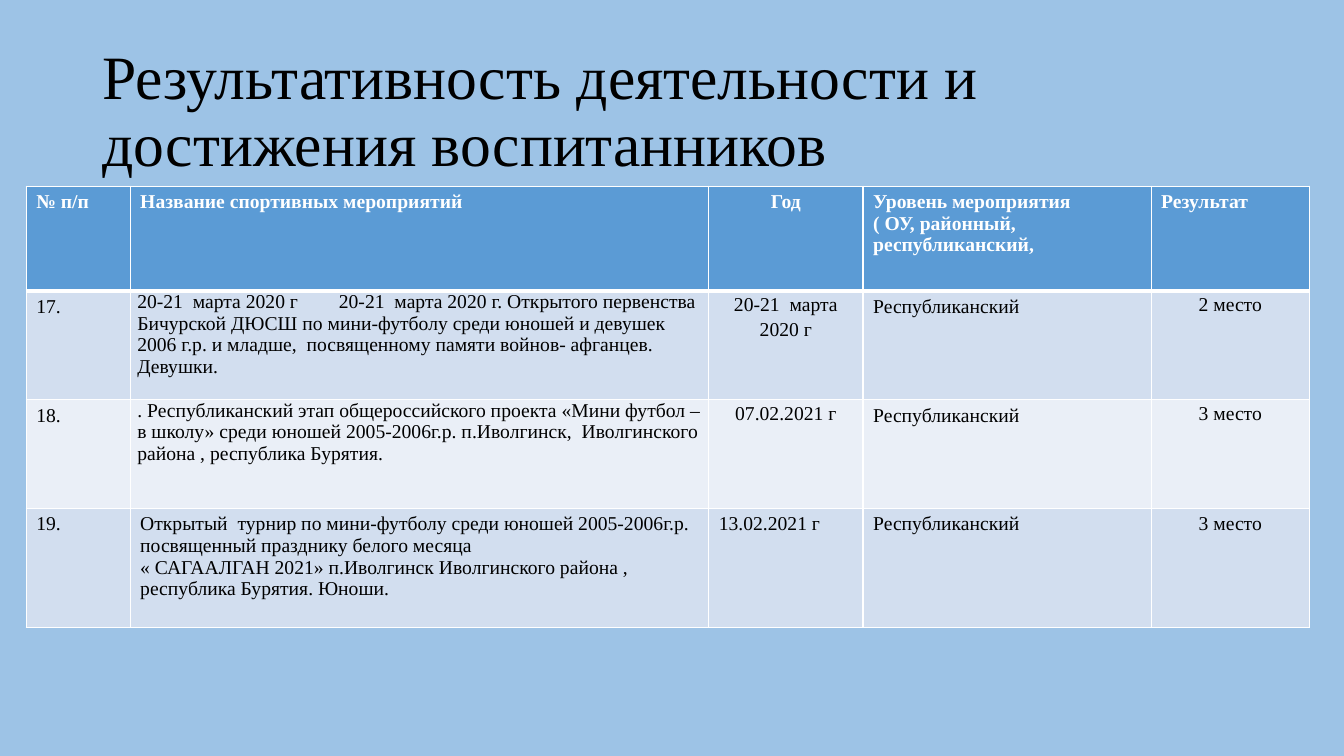
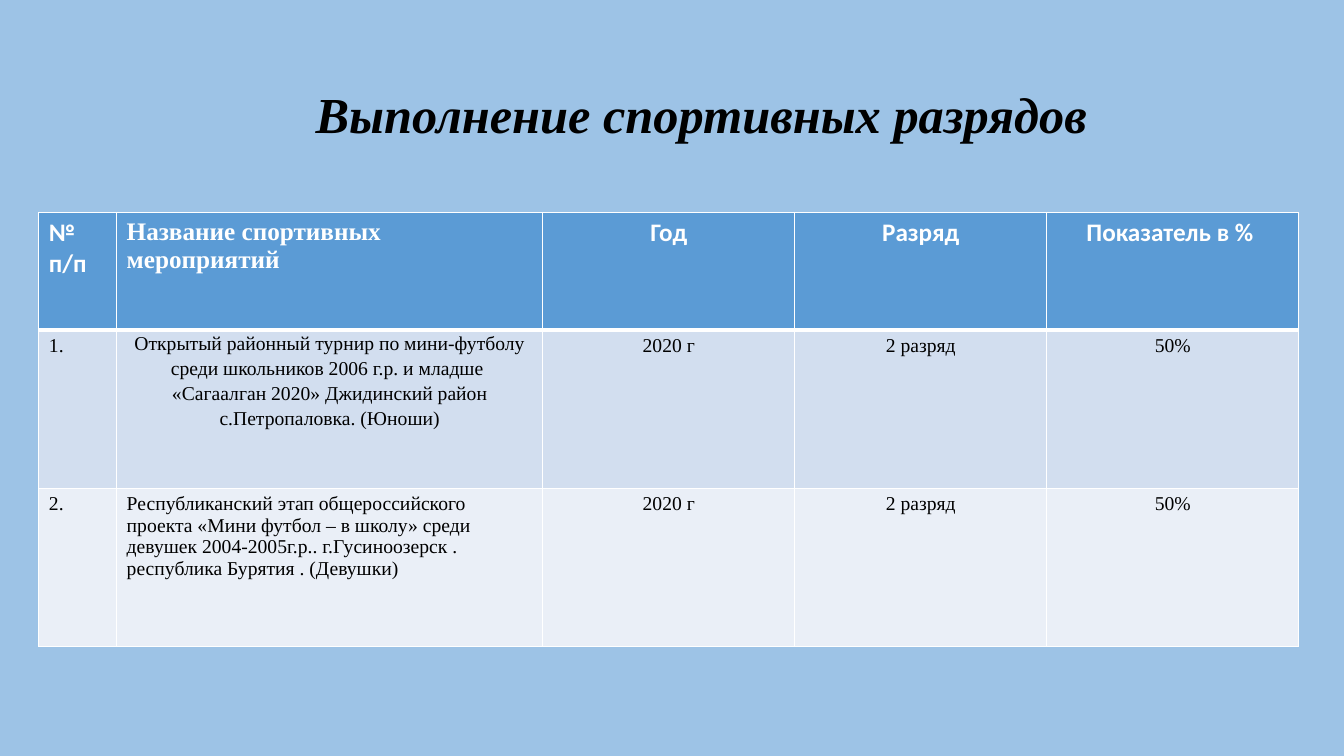
import pptx
import pptx.dml.color
import pptx.enum.text
import pptx.oxml
import pptx.oxml.ns
import pptx.util

Cm = pptx.util.Cm
CENTER = pptx.enum.text.PP_ALIGN.CENTER
SERIF = "Times New Roman"
BACKGROUND, HEADER, WHITE, BLACK = "9DC3E6", "5B9BD5", "FFFFFF", "000000"
BANDS = ["D2DEEF", "EAEFF7"]

HEAD = {"size": 14, "bold": True, "color": WHITE}
BIG_HEAD = HEAD | {"size": 18, "font": "Calibri", "align": CENTER}
CENTERED = {"align": CENTER}
TIGHT = {"tight": True}
TIGHT_CENTERED = {"tight": True, "align": CENTER, "spacing": 1.15}

pages = [
    {
        "title": "Результативность деятельности и достижения воспитанников",
        "title_at": (2.33, 1.01),
        "title_format": {"size": 44},
        "table_at": (0.66, 4.69),
        "columns": [2.62, 14.58, 3.89, 7.26, 3.99],
        "heights": [2.64, 2.74, 2.74, 3],
        "rows": [
            [
                ("№ п/п", HEAD),
                ("Название спортивных мероприятий", HEAD),
                ("Год", HEAD | CENTERED),
                ("Уровень мероприятия\n( ОУ, районный, республиканский,", HEAD),
                ("Результат", HEAD),
            ],
            [
                ("17.", {}),
                ("20-21  марта 2020 г\t20-21  марта 2020 г. Открытого первенства "
                 "Бичурской ДЮСШ по мини-футболу среди юношей и девушек 2006 г.р. "
                 "и младше,  посвященному памяти войнов- афганцев. Девушки.", TIGHT),
                ("20-21  марта 2020 г", TIGHT_CENTERED),
                ("Республиканский", {}),
                ("2 место", TIGHT_CENTERED),
            ],
            [
                ("18.", {}),
                (". Республиканский этап общероссийского проекта «Мини футбол – "
                 "в школу» среди юношей 2005-2006г.р. п.Иволгинск,  Иволгинского "
                 "района , республика Бурятия.", TIGHT),
                ("07.02.2021 г", TIGHT_CENTERED),
                ("Республиканский", {}),
                ("3 место", TIGHT_CENTERED),
            ],
            [
                ("19.", {}),
                ("Открытый  турнир по мини-футболу среди юношей 2005-2006г.р. "
                 "посвященный празднику белого месяца\n« САГААЛГАН 2021» п.Иволгинск "
                 "Иволгинского района , республика Бурятия. Юноши.", {}),
                ("13.02.2021 г", {}),
                ("Республиканский", {}),
                ("3 место", CENTERED),
            ],
        ],
    },
    {
        "title": "Выполнение спортивных разрядов ",
        "title_at": (3.23, 1.12),
        "title_format": {"size": 36, "bold": True, "italic": True, "align": CENTER},
        "table_at": (0.98, 5.36),
        "columns": [1.96, 10.74, 6.35, 6.35, 6.35],
        "heights": [2.95, 3.99, 3.99],
        "rows": [
            [
                ("№ п/п", BIG_HEAD | {"align": None}),
                ("Название спортивных мероприятий", HEAD | {"size": 18}),
                ("Год", BIG_HEAD),
                ("Разряд", BIG_HEAD),
                ("Показатель в % ", BIG_HEAD),
            ],
            [
                ("1.", {}),
                ("Открытый районный турнир по мини-футболу среди школьников 2006 г.р. "
                 "и младше  «Сагаалган 2020» Джидинский район с.Петропаловка. (Юноши)",
                 TIGHT_CENTERED),
                ("2020 г", CENTERED),
                ("2 разряд", CENTERED),
                ("50%", CENTERED),
            ],
            [
                ("2.", {}),
                ("Республиканский этап общероссийского проекта «Мини футбол – в школу» "
                 "среди девушек 2004-2005г.р.. г.Гусиноозерск . республика Бурятия . "
                 "(Девушки)", {}),
                ("2020 г", CENTERED),
                ("2 разряд", CENTERED),
                ("50%", CENTERED),
            ],
        ],
    },
]


def paint(target, color):
    if hasattr(target, "solid"):
        target.solid()
        target = target.fore_color
    target.rgb = pptx.dml.color.RGBColor.from_string(color)


def write(holder, text, size=14, font=SERIF, color=BLACK, bold=False, italic=False,
          align=None, spacing=1.0, tight=False):
    if tight:
        holder.margin_left = holder.margin_right = Cm(0.18)
        holder.margin_top = holder.margin_bottom = 0
    frame = getattr(holder, "text_frame", holder)
    for number, line in enumerate(text.split("\n")):
        para = frame.add_paragraph() if number else frame.paragraphs[0]
        para.alignment = align
        para.line_spacing = spacing
        span = para.add_run()
        span.text = line
        span.font.size = pptx.util.Pt(size)
        span.font.name = font
        span.font.bold = bold
        span.font.italic = italic
        paint(span.font.color, color)


deck = pptx.Presentation()
deck.slide_width, deck.slide_height = Cm(33.87), Cm(19.05)
paint(deck.slide_master.background.fill, BACKGROUND)

for content in pages:
    page = deck.slides.add_slide(deck.slide_layouts[6])
    left, top = content["title_at"]
    box = page.shapes.add_textbox(Cm(left), Cm(top), Cm(29.21), Cm(3.68))
    box.text_frame.word_wrap = True
    box.text_frame.vertical_anchor = pptx.enum.text.MSO_ANCHOR.MIDDLE
    write(box, content["title"], spacing=0.9, **content["title_format"])

    columns, heights, rows = content["columns"], content["heights"], content["rows"]
    left, top = content["table_at"]
    table = page.shapes.add_table(len(rows), len(columns), Cm(left), Cm(top),
                                  Cm(sum(columns)), Cm(sum(heights))).table
    table.first_row = table.horz_banding = False
    for column, width in zip(table.columns, columns):
        column.width = Cm(width)
    for row, height in zip(table.rows, heights):
        row.height = Cm(height)

    for row_number, row in enumerate(rows):
        for column_number, (text, style) in enumerate(row):
            cell = table.cell(row_number, column_number)
            paint(cell.fill, BANDS[(row_number - 1) % 2] if row_number else HEADER)
            write(cell, text, **style)
            properties = cell._tc.get_or_add_tcPr()
            for place, side in enumerate("LRTB"):
                thick = (row_number, side) in [(0, "B"), (1, "T")]
                properties.insert(place, pptx.oxml.parse_xml(
                    f'<a:ln{side} {pptx.oxml.ns.nsdecls("a")} '
                    f'w="{pptx.util.Pt(3 if thick else 1)}"><a:solidFill>'
                    f'<a:srgbClr val="{WHITE}"/></a:solidFill></a:ln{side}>'))

deck.save("out.pptx")
